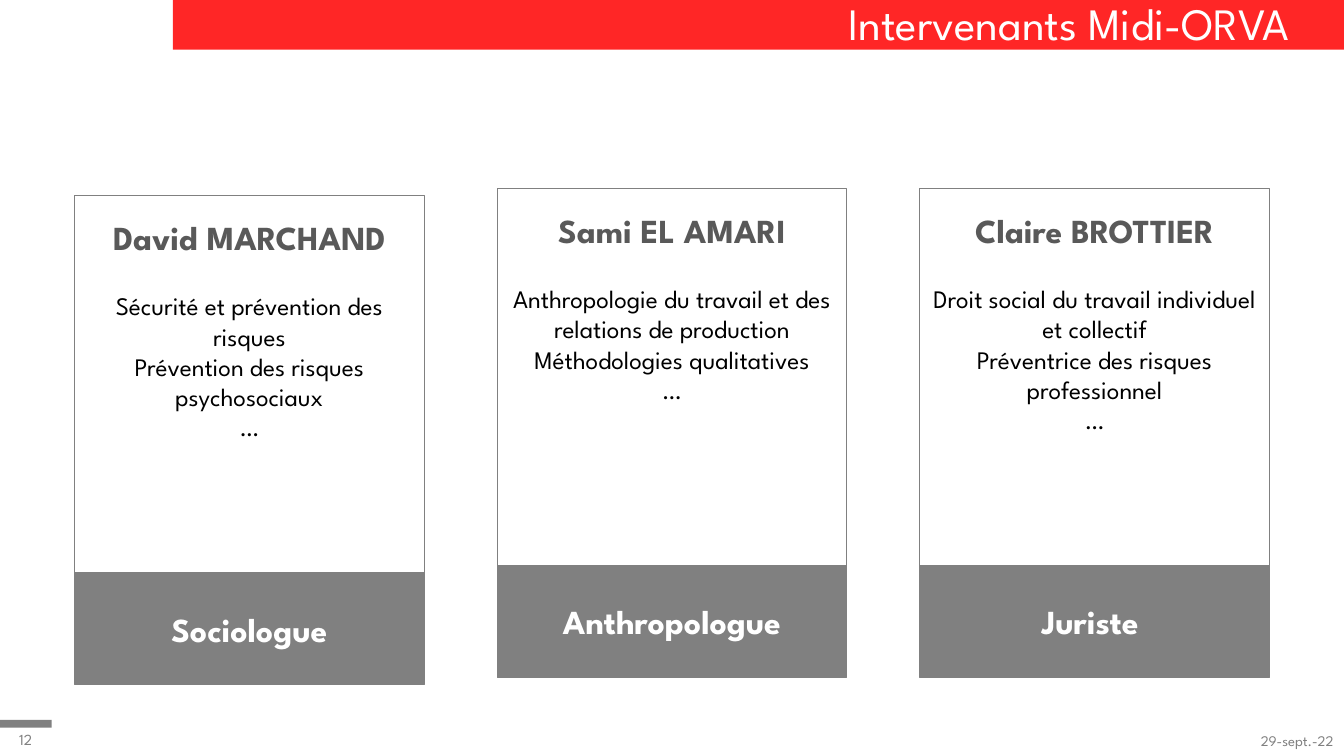
from lxml import etree
from pptx import Presentation
from pptx.dml.color import RGBColor as RGB
from pptx.enum.shapes import MSO_SHAPE as Shape
from pptx.enum.text import MSO_ANCHOR as Anchor, PP_ALIGN as Align
from pptx.oxml.ns import qn
from pptx.util import Cm, Pt

RED = RGB(0xFF, 0x00, 0x00)
GRAY = RGB(0x80, 0x80, 0x80)
DARK = RGB(0x59, 0x59, 0x59)
BLACK = RGB(0x00, 0x00, 0x00)
WHITE = RGB(0xFF, 0xFF, 0xFF)
FONT = "League Spartan"

LEFT, STEP, WIDTH = 1.88, 10.65, 8.81
BODY, DROP, FOOT = 9.57, 9.5, 2.82  # body height, role offset, role height

# Name, skills, role, top of the card
PEOPLE = [
    ("David MARCHAND",
     ["Sécurité et prévention des risques",
      "Prévention des risques psychosociaux", "…"],
     "Sociologue", 4.93),
    ("Sami EL AMARI",
     ["Anthropologie du travail et des relations de production",
      "Méthodologies qualitatives", "…"],
     "Anthropologue", 4.75),
    ("Claire BROTTIER",
     ["Droit social du travail individuel et collectif",
      "Préventrice des risques professionnel", "…"],
     "Juriste ", 4.75),
]


def add_rect(slide, x, y, w, h, fill=None, line=None, alpha=None):
    rect = slide.shapes.add_shape(Shape.RECTANGLE, Cm(x), Cm(y), Cm(w), Cm(h))
    rect.shadow.inherit = False
    if fill is None:
        rect.fill.background()
    else:
        rect.fill.solid()
        rect.fill.fore_color.rgb = fill
    if alpha is not None:
        color = rect.fill._xPr.find(".//" + qn("a:srgbClr"))
        etree.SubElement(color, qn("a:alpha")).set("val", str(alpha * 1000))
    if line is None:
        rect.line.fill.background()
    else:
        rect.line.color.rgb = line
        rect.line.width = Pt(0.75)
    return rect


def write(frame, text, size, color, bold=False, align=Align.CENTER,
          after=0, space=None):
    """Fill the first paragraph if it is free, else add one."""
    para = frame.paragraphs[0]
    if para.runs:
        para = frame.add_paragraph()
    para.alignment = align
    para.space_after = Pt(after)
    if space:
        para.line_spacing = space
    run = para.add_run()
    run.text = text
    font = run.font
    font.name, font.size, font.bold = FONT, Pt(size), bold
    font.color.rgb = color


def add_label(slide, x, y, w, h, text, size, color, **style):
    frame = slide.shapes.add_textbox(Cm(x), Cm(y), Cm(w), Cm(h)).text_frame
    frame.word_wrap = True
    frame.vertical_anchor = Anchor.BOTTOM
    write(frame, text, size, color, **style)


def add_card(slide, x, y, name, skills, role):
    frame = add_rect(slide, x, y, WIDTH, BODY, line=GRAY).text_frame
    frame.word_wrap = True
    frame.vertical_anchor = Anchor.TOP
    frame.margin_top = Cm(0.53)
    write(frame, name, 24, DARK, bold=True, after=24)
    for skill in skills:
        write(frame, skill, 18, BLACK)

    foot = add_rect(slide, x, y + DROP, WIDTH, FOOT, fill=GRAY, line=GRAY)
    foot.text_frame.word_wrap = True
    foot.text_frame.vertical_anchor = Anchor.MIDDLE
    write(foot.text_frame, role, 24, WHITE, bold=True)


def main():
    deck = Presentation()
    deck.slide_width, deck.slide_height = Cm(33.87), Cm(19.05)
    slide = deck.slides.add_slide(deck.slide_layouts[6])

    add_rect(slide, 4.36, 0, 29.51, 1.25, fill=RED, alpha=85)
    add_rect(slide, 0, 18.14, 1.3, 0.2, fill=GRAY)
    add_label(slide, 4.67, 0, 28.09, 1.4, "Intervenants Midi-ORVA", 32, WHITE,
              align=Align.RIGHT, space=0.9)
    for col, (name, skills, role, top) in enumerate(PEOPLE):
        add_card(slide, LEFT + col * STEP, top, name, skills, role)
    add_label(slide, 0, 18.24, 1.3, 0.76, "12", 11, GRAY)
    add_label(slide, 26.24, 17.98, 7.62, 1.02, "29-sept.-22", 10.5, GRAY,
              align=Align.RIGHT)

    deck.save("out.pptx")


if __name__ == "__main__":
    main()
